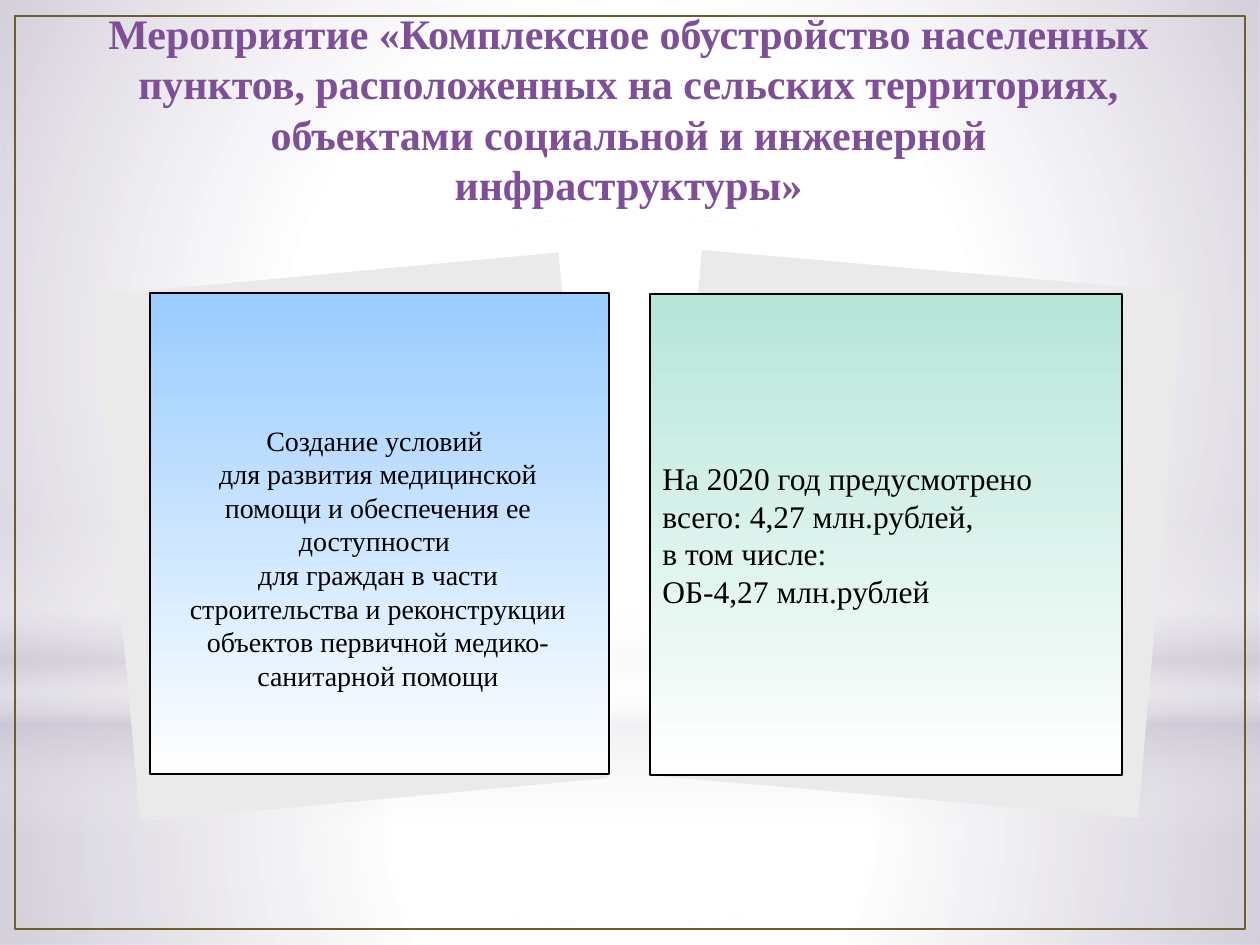
"""Build the slide on equipping rural settlements with social facilities."""
from pptx import Presentation
from pptx.dml.color import RGBColor
from pptx.enum import shapes, text
from pptx.oxml import parse_xml
from pptx.oxml.ns import nsdecls, qn
from pptx.util import Emu, Pt

PX = 914400 // 126
THEME = {
    "font": "Times New Roman",
    "heading": "7E4E99", "ink": "000000", "paper": "EAEAEA", "frame": "6B5F2B",
    "blue": "99CCFF", "green": "B6E6D8", "white": "FFFFFF", "haze": "C9C2D1",
    "title_size": 24, "goal_size": 16, "budget_size": 18,
}
HEADING = ("Мероприятие «Комплексное обустройство населенных пунктов, расположенных "
           "на сельских территориях, объектами социальной и инженерной инфраструктуры»")
HEADING_BOX = (92, 1, 1073, 158)
GOAL = ["Создание условий \vдля развития медицинской помощи и обеспечения ее доступности "
        "\vдля граждан в части строительства и реконструкции объектов первичной медико-",
        "санитарной помощи"]
GOAL_BOX = (165, 417, 426, 284)
BUDGET = ["На 2020 год предусмотрено", "всего: 4,27 млн.рублей,", "в том числе:",
          "ОБ-4,27 млн.рублей"]
BACKDROP = [
    ("RECTANGLE", (0, 703, 1260, 242), True,
     [(0, "white", 91), (37, "white", 76), (100, "haze", 79)]),
    ("RECTANGLE", (0, 0, 1260, 703), True,
     [(0, "white", 89), (48, "white", 62), (100, "haze", 79)]),
    ("RECTANGLE", (0, 519, 1260, 315), False,
     [(0, "white", 0), (29, "white", 30), (45, "haze", 40), (55, "white", 26),
      (65, "haze", 60), (100, "white", 0)]),
    ("OVAL", (0, 220, 1260, 703), True, [(0, "white", 100), (56, "white", 0)]),
]
CARDS = [
    {"sheet": (115, 273, 469, 528), "tilt": 354.7, "panel": (150, 293, 459, 481),
     "tint": "blue", "lines": []},
    {"sheet": (678, 270, 484, 528), "tilt": 5, "panel": (650, 294, 472, 481),
     "tint": "green", "lines": BUDGET},
]
FRAME_BOX = (15, 16, 1230, 913)


def place(box):
    return [Emu(length * PX) for length in box]


def color(name):
    return RGBColor.from_string(THEME[name])


def add_block(slide, box, fill=None, line=None, width=0.75, kind="RECTANGLE"):
    block = slide.shapes.add_shape(getattr(shapes.MSO_SHAPE, kind), *place(box))
    block.shadow.inherit = False
    block.fill.background()
    block.line.fill.background()
    if fill:
        block.fill.solid()
        block.fill.fore_color.rgb = color(fill)
    if line:
        block.line.color.rgb = color(line)
        block.line.width = Pt(width)
    return block


def set_gradient(block, stops, radial=False):
    marks = "".join(
        f'<a:gs pos="{at * 1000}"><a:srgbClr val="{THEME[name]}">'
        f'<a:alpha val="{opacity * 1000}"/></a:srgbClr></a:gs>'
        for at, name, opacity in stops)
    course = ('<a:path path="circle"><a:fillToRect l="50000" t="50000" r="50000" b="50000"/>'
              '</a:path>' if radial else '<a:lin ang="5400000" scaled="0"/>')
    gradient = parse_xml(f'<a:gradFill {nsdecls("a")} rotWithShape="1">'
                         f'<a:gsLst>{marks}</a:gsLst>{course}</a:gradFill>')
    properties = block._element.spPr
    properties.replace(properties.find(qn("a:noFill")), gradient)


def write(frame, lines, size, align, anchor, ink="ink", bold=False):
    frame.word_wrap = True
    frame.auto_size = text.MSO_AUTO_SIZE.NONE
    frame.vertical_anchor = anchor
    frame.text = "\n".join(lines)
    for paragraph in frame.paragraphs:
        paragraph.alignment = align
        paragraph.font.name = THEME["font"]
        paragraph.font.size = Pt(THEME[size])
        paragraph.font.bold = bold
        paragraph.font.color.rgb = color(ink)


def main():
    deck = Presentation()
    deck.slide_width, deck.slide_height = place((1260, 945))
    slide = deck.slides.add_slide(deck.slide_layouts[5])
    align, anchor = text.PP_ALIGN, text.MSO_ANCHOR

    for kind, box, radial, stops in BACKDROP:
        set_gradient(add_block(slide, box, kind=kind), stops, radial)

    heading = slide.shapes.title
    heading.left, heading.top, heading.width, heading.height = place(HEADING_BOX)
    write(heading.text_frame, [HEADING], "title_size", align.CENTER, anchor.TOP,
          "heading", True)
    slide.shapes._spTree.append(heading._element)

    for card in CARDS:
        add_block(slide, card["sheet"], "paper").rotation = card["tilt"]
        panel = add_block(slide, card["panel"], line="ink")
        set_gradient(panel, [(0, card["tint"], 100), (100, "white", 100)])
        if card["lines"]:
            write(panel.text_frame, card["lines"], "budget_size", align.LEFT, anchor.MIDDLE)

    goal = slide.shapes.add_textbox(*place(GOAL_BOX))
    write(goal.text_frame, GOAL, "goal_size", align.CENTER, anchor.TOP)
    add_block(slide, FRAME_BOX, line="frame", width=1.5)
    deck.save("out.pptx")


if __name__ == "__main__":
    main()
